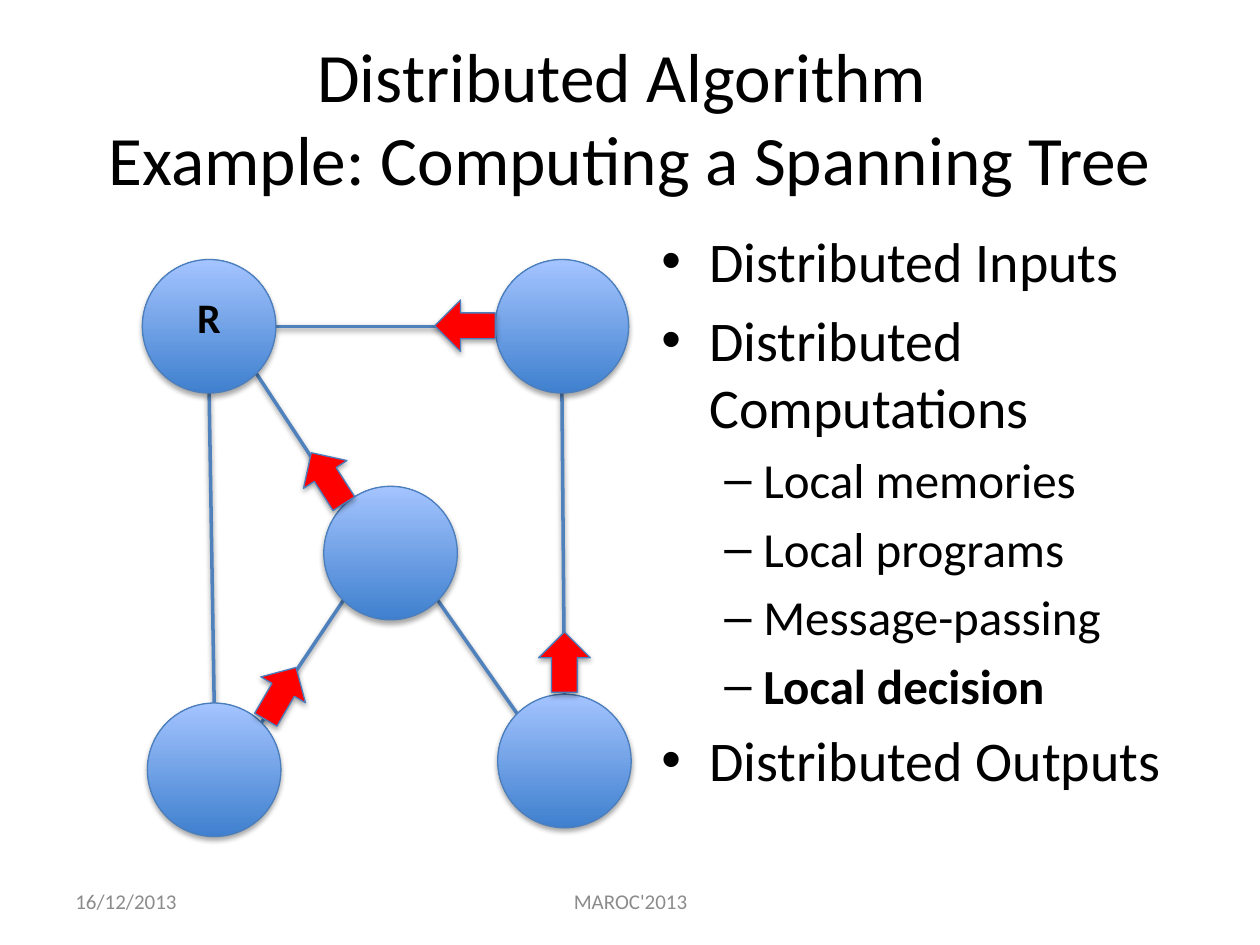
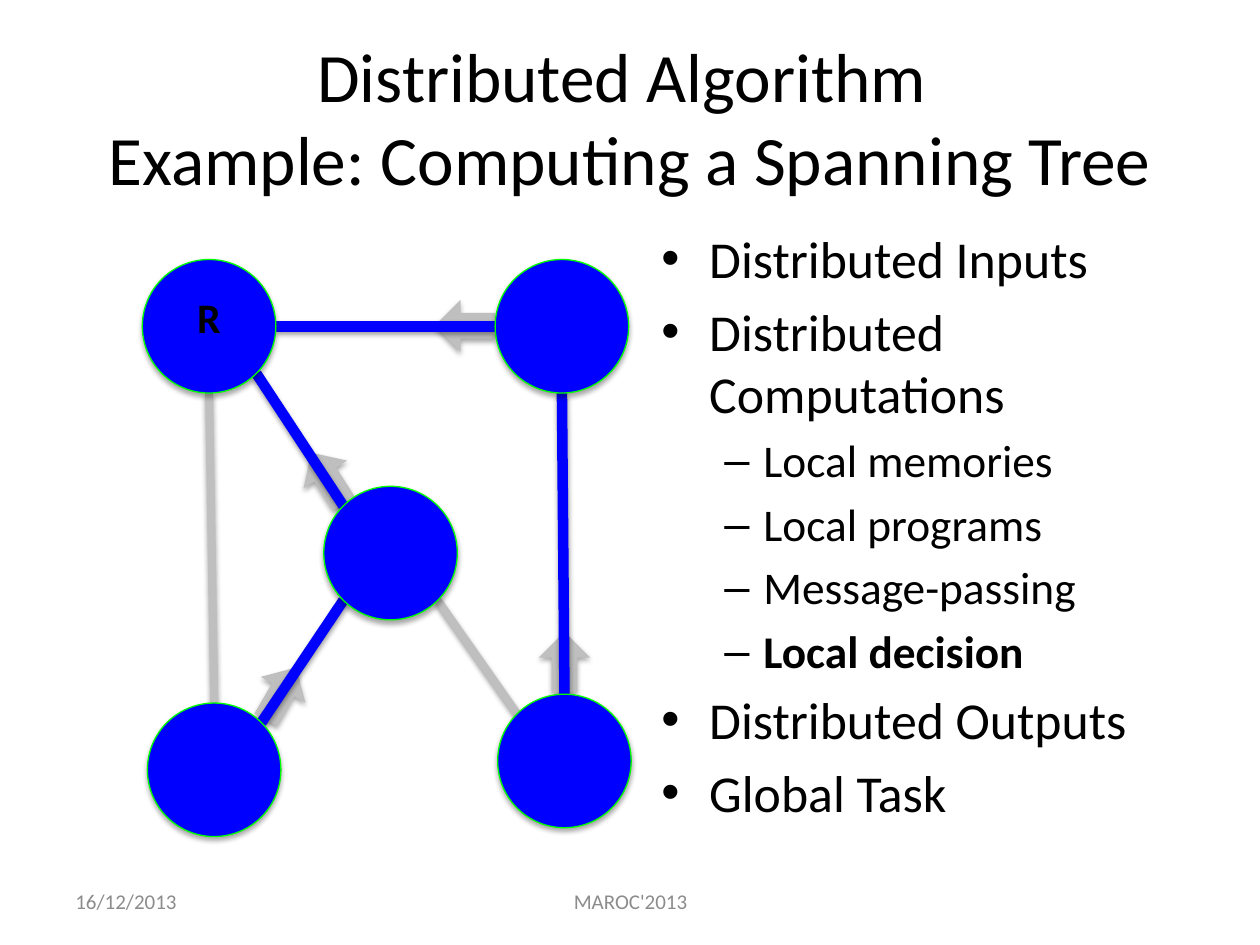
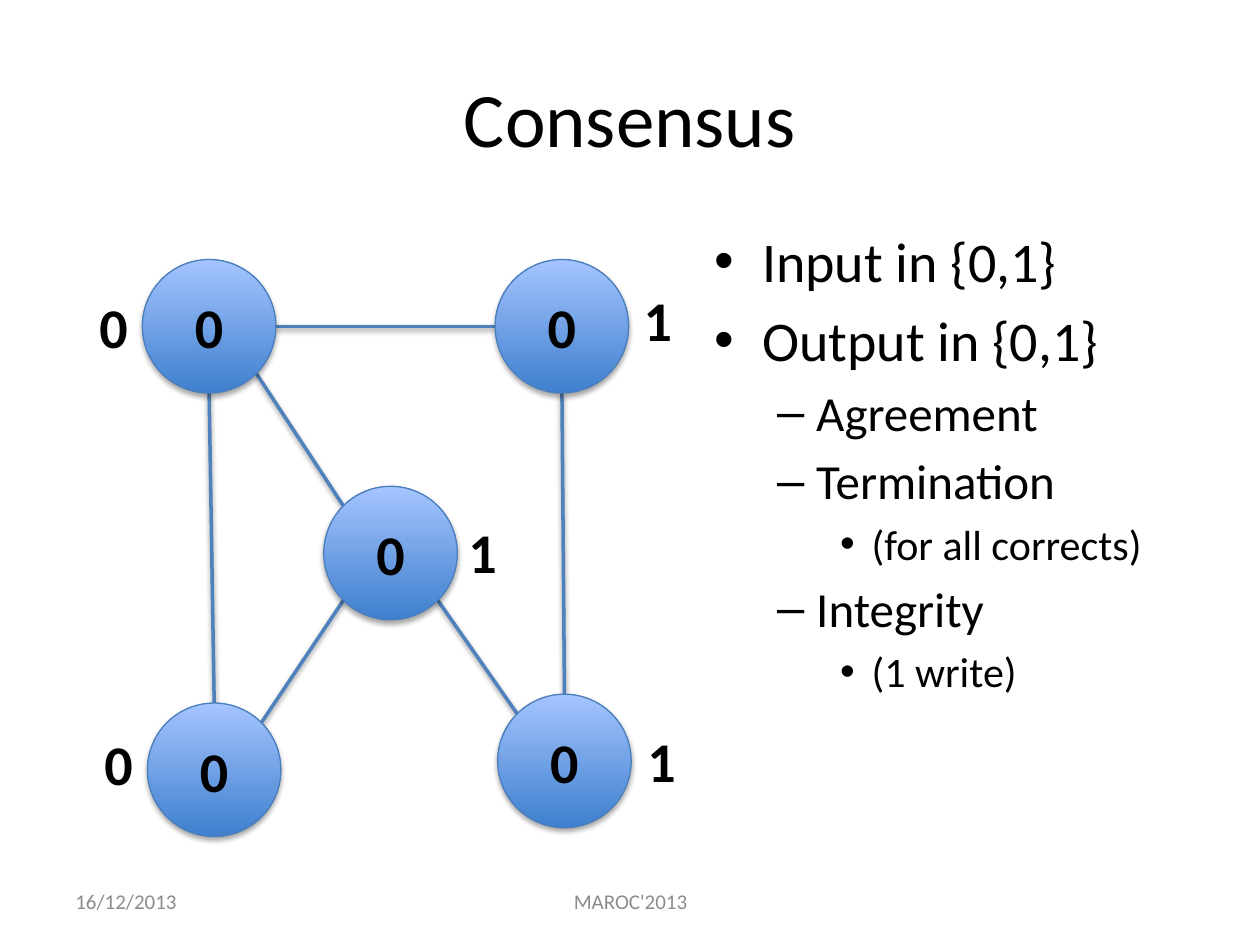
from math import sqrt

from lxml.etree import SubElement
from pptx import Presentation
from pptx.dml.color import RGBColor
from pptx.enum.shapes import MSO_CONNECTOR, MSO_SHAPE
from pptx.enum.text import MSO_ANCHOR, PP_ALIGN
from pptx.oxml.ns import qn
from pptx.util import Emu, Inches, Pt

ELLIPSE = MSO_SHAPE.OVAL
RIGHT_ARROW = MSO_SHAPE.RIGHT_ARROW
STRAIGHT = MSO_CONNECTOR.STRAIGHT
LEFT = PP_ALIGN.LEFT
CENTER = PP_ALIGN.CENTER
TOP = MSO_ANCHOR.TOP
MIDDLE = MSO_ANCHOR.MIDDLE

FONT = "Calibri"
COLORS = {
    "text": "000000",
    "footer": "8C8C8C",
    "edge": "4F81BD",
    "outline": "4B7EBC",
    "node_bottom": "3F80CE",
    "node_top": "A4C4FF",
    "message": "FF0000",
    "tree": "0000FF",
    "tree_outline": "00FF00",
    "unused": "BFBFBF",
}

NODE_SIZE = 1.06
NODES = {
    "root": (1.13, 2.06),
    "top_right": (3.93, 2.06),
    "middle": (2.57, 3.86),
    "bottom_right": (3.95, 5.51),
    "bottom_left": (1.17, 5.58),
}
EDGES = [
    ("root", (1, 1), "middle", True),
    ("top_right", (0, 1), "bottom_right", True),
    ("middle", (1, 1), "bottom_right", False),
    ("root", (0, 1), "bottom_left", False),
    ("middle", (-1, 1), "bottom_left", True),
    ("root", (1, 0), "top_right", True),
]
ARROW_SIZE = (0.48, 0.41)
ARROWS = [
    (2.36, 3.59, 237.4),
    (3.45, 2.38, 180),
    (4.24, 5.05, 270),
    (1.99, 5.3, 300.1),
]

LEVELS = [
    ("•", 0.38, 0.38, 32),
    ("–", 0.81, 0.31, 28),
    ("•", 1.25, 0.25, 24),
]
TREE_TITLE = ["Distributed Algorithm ", "Example: Computing a Spanning Tree"]
TREE_POINTS = [
    (0, "Distributed Inputs", False),
    (0, "Distributed Computations", False),
    (1, "Local memories", False),
    (1, "Local programs", False),
    (1, "Message-passing", False),
    (1, "Local decision", True),
    (0, "Distributed Outputs", False),
]
CONSENSUS_POINTS = [
    (0, "Input in {0,1}", False),
    (0, "Output in {0,1}", False),
    (1, "Agreement", False),
    (1, "Termination", False),
    (2, "(for all corrects)", False),
    (1, "Integrity", False),
    (2, "(1 write)", False),
]
CONSENSUS_INPUTS = [
    ("0", 0.69, 2.27),
    ("0", 0.73, 5.74),
    ("1", 3.62, 4.06),
    ("1", 5.01, 2.22),
    ("1", 5.04, 5.72),
]


def rgb(name):
    return RGBColor.from_string(COLORS[name])


def add_span(para, text, size, color="text", bold=False):
    span = para.add_run()
    span.text = text
    span.font.name = FONT
    span.font.size = Pt(size)
    span.font.bold = bold
    span.font.color.rgb = rgb(color)


def add_box(page, left, top, width, height, anchor=TOP, wrap=True):
    box = page.shapes.add_textbox(Inches(left), Inches(top), Inches(width), Inches(height))
    frame = box.text_frame
    frame.word_wrap = wrap
    frame.vertical_anchor = anchor
    return frame


def cast_shadow(shape, distance, opacity):
    effects = SubElement(shape._element.spPr, qn("a:effectLst"))
    shadow = SubElement(effects, qn("a:outerShdw"), blurRad=str(Pt(3.1)),
                        dist=str(Pt(distance)), dir="5400000", rotWithShape="0")
    color = SubElement(shadow, qn("a:srgbClr"), val=COLORS["text"])
    SubElement(color, qn("a:alpha"), val=str(opacity * 1000))


def add_title(page, lines, size):
    para = add_box(page, 0.5, 0.3, 9, 1.25, MIDDLE).paragraphs[0]
    para.alignment = CENTER
    for index, line in enumerate(lines):
        if index:
            para.add_line_break()
        add_span(para, line, size)


def add_footer(page):
    for text, left, width, alignment in [("16/12/2013", 0.5, 2.33, LEFT),
                                         ("MAROC'2013", 3.42, 3.17, CENTER)]:
        para = add_box(page, left, 6.95, width, 0.4, MIDDLE).paragraphs[0]
        para.alignment = alignment
        add_span(para, text, 12, "footer")


def add_points(page, points, left, width, scale=1):
    frame = add_box(page, left, 1.75, width, 4.95)
    for index, (level, text, bold) in enumerate(points):
        para = frame.add_paragraph() if index else frame.paragraphs[0]
        bullet, margin, hanging, size = LEVELS[level]
        size = round(size * scale, 1)
        para.level = level
        para.space_before = Pt(size * 0.2)
        properties = para._p.get_or_add_pPr()
        properties.set("marL", str(Inches(margin)))
        properties.set("indent", str(-Inches(hanging)))
        SubElement(properties, qn("a:buFont"), typeface="Arial")
        SubElement(properties, qn("a:buChar"), char=bullet)
        add_span(para, text, size, bold=bold)


def edge_end(node, direction):
    reach = NODE_SIZE / 2 / sqrt(sum(step * step for step in direction))
    return [Inches(start + NODE_SIZE / 2 + reach * step)
            for start, step in zip(NODES[node], direction)]


def add_edges(page, tree_style, other_style):
    for start, direction, end, in_tree in EDGES:
        opposite = [-step for step in direction]
        line = page.shapes.add_connector(STRAIGHT, *edge_end(start, direction),
                                         *edge_end(end, opposite))
        color, width = tree_style if in_tree else other_style
        line.line.color.rgb = rgb(color)
        line.line.width = Pt(width)
        cast_shadow(line, 1.6, 38)


def paint_node(node, in_tree):
    if in_tree:
        node.fill.solid()
        node.fill.fore_color.rgb = rgb("tree")
    else:
        node.fill.gradient()
        node.fill.gradient_angle = 90
        for stop, color in zip(node.fill.gradient_stops, ("node_bottom", "node_top")):
            stop.color.rgb = rgb(color)
    node.line.color.rgb = rgb("tree_outline" if in_tree else "outline")
    node.line.width = Pt(0.75)
    cast_shadow(node, 1.8, 35)


def add_nodes(page, labels, size, in_tree=False, spacing=1):
    for name, (left, top) in NODES.items():
        node = page.shapes.add_shape(ELLIPSE, Inches(left), Inches(top),
                                     Inches(NODE_SIZE), Inches(NODE_SIZE))
        paint_node(node, in_tree)
        if name in labels:
            frame = node.text_frame
            frame.vertical_anchor = MIDDLE
            frame.margin_left = frame.margin_right = Inches(0.04)
            para = frame.paragraphs[0]
            para.alignment = CENTER
            para.line_spacing = spacing
            add_span(para, labels[name], size, bold=True)


def add_arrows(page, color, outline=None):
    width, height = ARROW_SIZE
    for left, top, angle in ARROWS:
        arrow = page.shapes.add_shape(RIGHT_ARROW, Inches(left), Inches(top),
                                      Inches(width), Inches(height))
        arrow.rotation = angle
        arrow.fill.solid()
        arrow.fill.fore_color.rgb = rgb(color)
        if outline:
            arrow.line.color.rgb = rgb(outline)
            arrow.line.width = Pt(0.75)
        else:
            arrow.line.fill.background()
        cast_shadow(arrow, 1.8, 35)


def add_inputs(page):
    for value, left, top in CONSENSUS_INPUTS:
        frame = add_box(page, left, top, 0.43, 0.64, wrap=False)
        add_span(frame.paragraphs[0], value, 32, bold=True)


def add_page(deck, title, title_size):
    page = deck.slides.add_slide(deck.slide_layouts[6])
    add_title(page, title, title_size)
    add_footer(page)
    return page


def main():
    deck = Presentation()
    deck.slide_width = Inches(10)
    deck.slide_height = Inches(7.5)
    plain = ("edge", 2)

    page = add_page(deck, TREE_TITLE, 39.6)
    add_points(page, TREE_POINTS, 5.15, 4.85)
    add_edges(page, plain, plain)
    add_nodes(page, {"root": "R"}, 24, spacing=0.5)
    add_arrows(page, "message", "outline")

    page = add_page(deck, TREE_TITLE, 39.6)
    add_arrows(page, "unused")
    add_points(page, TREE_POINTS + [(0, "Global Task", False)], 5.15, 4.85, scale=0.925)
    add_edges(page, ("tree", 6), ("unused", 4.5))
    add_nodes(page, {"root": "R"}, 24, in_tree=True, spacing=0.5)

    page = add_page(deck, ["Consensus"], 44)
    add_edges(page, plain, plain)
    add_nodes(page, dict.fromkeys(NODES, "0"), 32)
    add_inputs(page)
    add_points(page, CONSENSUS_POINTS, 5.57, 3.93)

    deck.save("out.pptx")


if __name__ == "__main__":
    main()
